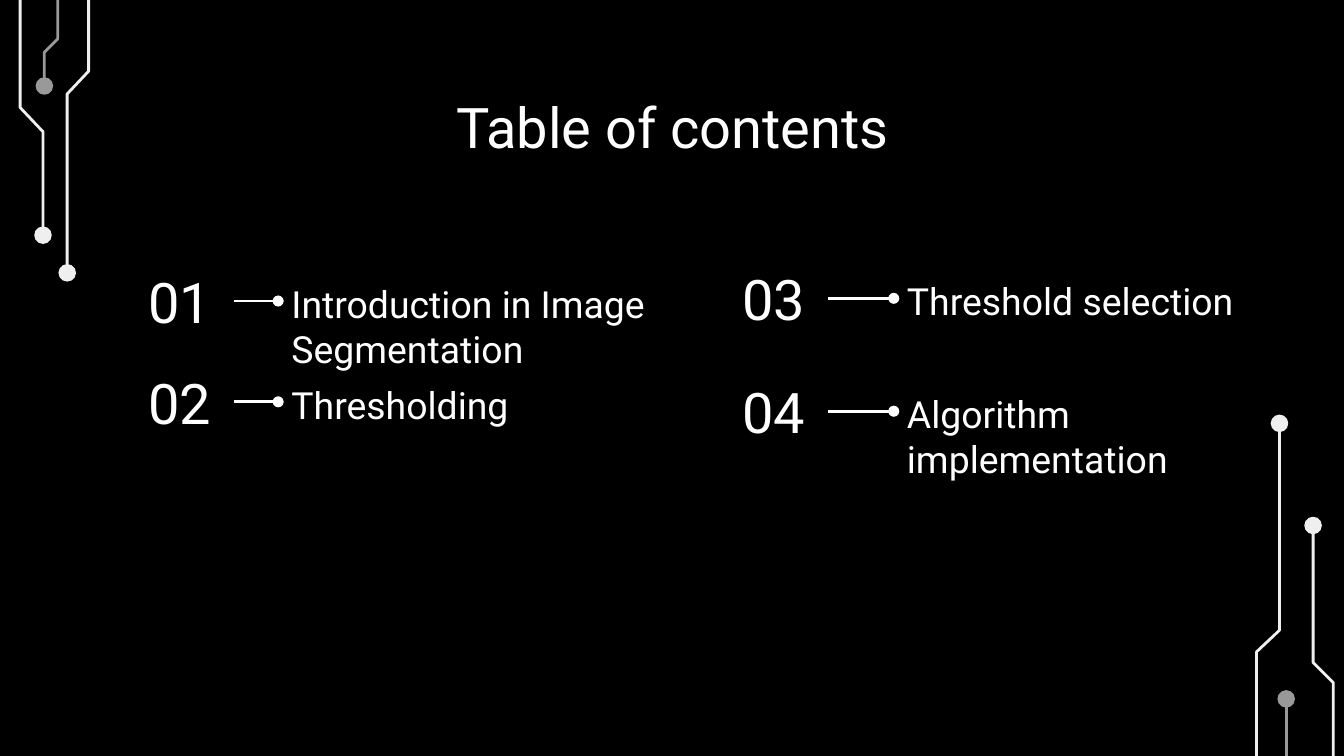
"""Build a table of contents slide framed by circuit traces."""
from lxml import etree
from pptx import Presentation
from pptx.dml.color import RGBColor
from pptx.enum.shapes import MSO_CONNECTOR, MSO_SHAPE
from pptx.enum.text import MSO_ANCHOR, PP_ALIGN
from pptx.oxml.ns import qn
from pptx.util import Inches, Pt

STRAIGHT = MSO_CONNECTOR.STRAIGHT
OVAL = MSO_SHAPE.OVAL
TOP, MIDDLE = MSO_ANCHOR.TOP, MSO_ANCHOR.MIDDLE
LEFT, CENTER = PP_ALIGN.LEFT, PP_ALIGN.CENTER

BLACK = RGBColor(0x00, 0x00, 0x00)
WHITE = RGBColor(0xFF, 0xFF, 0xFF)
PALE = RGBColor(0xEF, 0xEF, 0xEF)
GRAY = RGBColor(0x99, 0x99, 0x99)

FONT = "Roboto"
WIDTH = 10
HEIGHT = WIDTH * 9 / 16
DOT = 0.12
NUMBER_W, ROW_H = 0.8, 0.5

TITLE = "Table of contents"
ITEMS = [
    ("01", "Introduction in Image Segmentation", 0.94, 2.07, 1.99, 3.14),
    ("02", "Thresholding", 0.94, 2.07, 2.74, 2.67),
    ("03", "Threshold selection", 5.36, 6.65, 1.97, 2.67),
    ("04", "Algorithm implementation", 5.36, 6.65, 2.81, 2.67),
]
TRACES = [
    (PALE, [(0.15, 0), (0.15, 0.8), (0.32, 0.98), (0.32, 1.75)]),
    (GRAY, [(0.43, 0), (0.43, 0.29), (0.33, 0.39), (0.33, 0.64)]),
    (PALE, [(0.66, 0), (0.66, 0.53), (0.5, 0.7), (0.5, 2.03)]),
    (PALE, [(9.35, HEIGHT), (9.35, 4.85), (9.52, 4.69), (9.52, 3.15)]),
    (PALE, [(9.92, HEIGHT), (9.92, 5.08), (9.77, 4.93), (9.77, 3.91)]),
    (GRAY, [(9.57, HEIGHT), (9.57, 5.2)]),
]


def add_trace(s, color, points):
    start, *rest = [(Inches(x), Inches(y)) for x, y in points]
    builder = s.shapes.build_freeform(*start)
    builder.add_line_segments(rest, close=False)
    sp = builder.convert_to_shape()
    sp.shadow.inherit = False
    sp.fill.background()
    sp.line.color.rgb = color
    sp.line.width = Pt(1.5)

    x, y = points[-1]
    dot = s.shapes.add_shape(OVAL, Inches(x - DOT / 2), Inches(y - DOT / 2),
                             Inches(DOT), Inches(DOT))
    dot.shadow.inherit = False
    dot.fill.solid()
    dot.fill.fore_color.rgb = color
    dot.line.color.rgb = color
    dot.line.width = Pt(0.75)


def add_text(s, text, x, y, w, h, size, align, anchor=TOP):
    sp = s.shapes.add_textbox(Inches(x), Inches(y), Inches(w), Inches(h))
    tf = sp.text_frame
    tf.word_wrap = True
    tf.vertical_anchor = anchor
    tf.margin_left = tf.margin_right = Inches(0.1)
    tf.margin_top = tf.margin_bottom = Inches(0.1)
    p = tf.paragraphs[0]
    p.alignment = align
    r = p.add_run()
    r.text = text
    r.font.name = FONT
    r.font.size = Pt(size)
    r.font.color.rgb = WHITE


def add_pointer(s, x1, x2, y):
    pointer = s.shapes.add_connector(STRAIGHT, Inches(x1), Inches(y), Inches(x2), Inches(y))
    pointer.line.color.rgb = WHITE
    pointer.line.width = Pt(1.5)
    props = pointer._element.spPr
    etree.SubElement(props.find(qn("a:ln")), qn("a:tailEnd"), type="oval")
    etree.SubElement(props, qn("a:effectLst"))


def main():
    prs = Presentation()
    prs.slide_width, prs.slide_height = Inches(WIDTH), Inches(HEIGHT)
    s = prs.slides.add_slide(prs.slide_layouts[6])
    s.background.fill.solid()
    s.background.fill.fore_color.rgb = BLACK

    for color, points in TRACES:
        add_trace(s, color, points)

    add_text(s, TITLE, 0.79, 0.59, 8.43, 0.63, 30, CENTER)
    for number, topic, number_x, topic_x, y, topic_w in ITEMS:
        add_text(s, number, number_x, y, NUMBER_W, ROW_H, 30, CENTER, MIDDLE)
        add_text(s, topic, topic_x, y, topic_w, ROW_H, 20, LEFT)
        add_pointer(s, number_x + NUMBER_W, topic_x, y + ROW_H / 2)

    prs.save("out.pptx")


if __name__ == "__main__":
    main()
